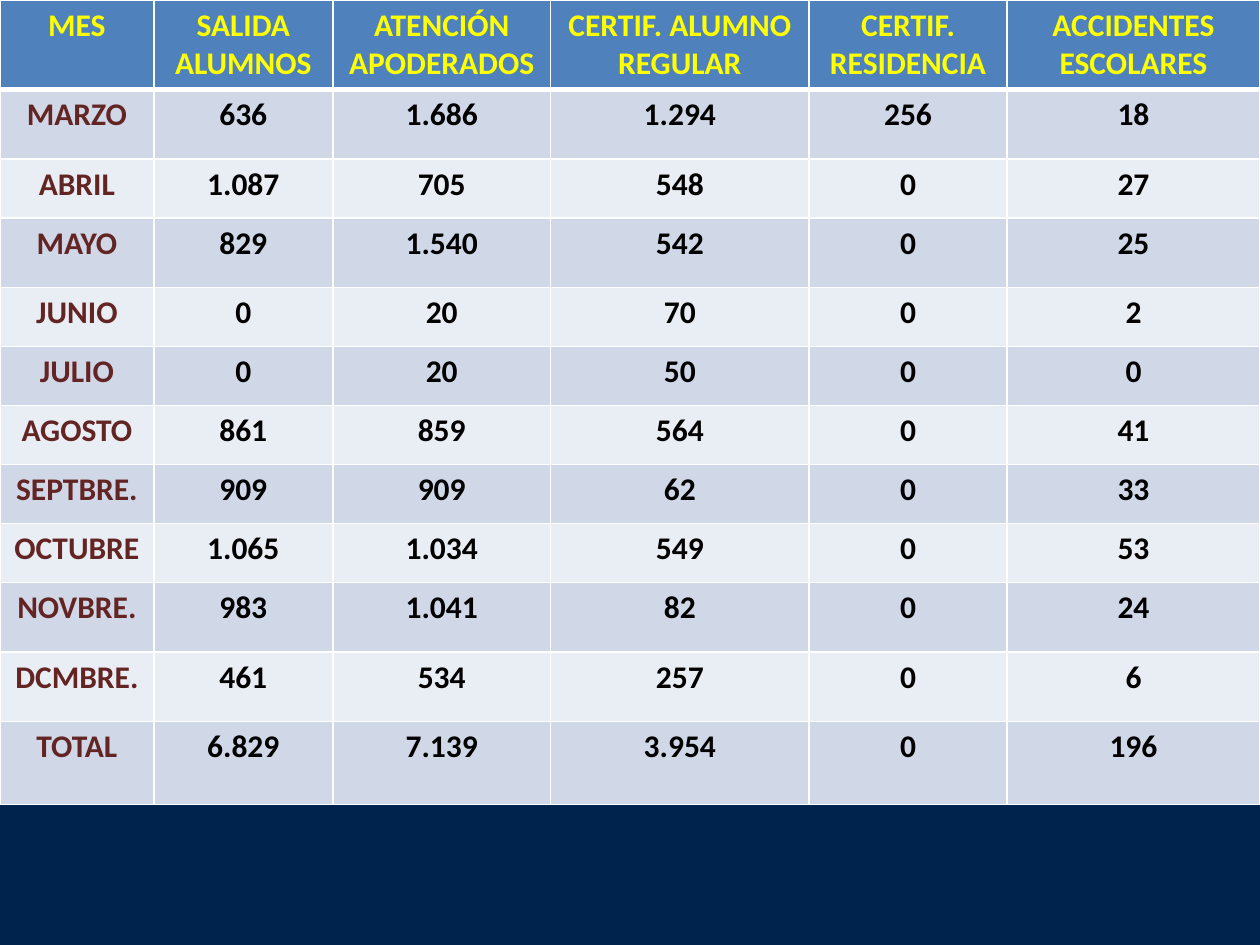
from dataclasses import dataclass

from lxml import etree
from pptx import Presentation
from pptx.dml.color import RGBColor
from pptx.enum.text import PP_ALIGN
from pptx.oxml import parse_xml
from pptx.oxml.ns import nsdecls, qn
from pptx.slide import Slide
from pptx.table import Table, _Cell
from pptx.util import Cm, Pt

CENTER = PP_ALIGN.CENTER
FONT = "Calibri"
WHITE = "FFFFFF"
HEADER_FILL = "4F81BD"
HEADER_TEXT = "FFFF00"
MONTH_TEXT = "632523"
COUNT_TEXT = "000000"
BAND_FILLS = ("D0D8E8", "E9EDF4")
BACKDROP_STOPS = ((0, "BFC9E5"), (40, "B5C0E0"), (100, "00234D"))
COLUMN_WIDTHS = (3.1, 3.61, 4.39, 5.21, 3.99, 5.1)
HEADER_HEIGHT = 1.68
SHORT, TALL, TOTAL_HEIGHT = 1.19, 1.4, 1.68


@dataclass(frozen=True)
class MonthRecord:
    month: str
    counts: tuple[str, ...]
    height: float = SHORT


HEADINGS = (
    "MES",
    "SALIDA ALUMNOS",
    "ATENCIÓN APODERADOS",
    "CERTIF. ALUMNO REGULAR",
    "CERTIF.\nRESIDENCIA",
    "ACCIDENTES ESCOLARES",
)
RECORDS = (
    MonthRecord("MARZO", ("636", "1.686", "1.294", "256", "18"), TALL),
    MonthRecord("ABRIL", ("1.087", "705", "548", "0", "27")),
    MonthRecord("MAYO", ("829", "1.540", "542", "0", "25"), TALL),
    MonthRecord("JUNIO", ("0", "20", "70", "0", "2")),
    MonthRecord("JULIO", ("0", "20", "50", "0", "0")),
    MonthRecord("AGOSTO", ("861", "859", "564", "0", "41")),
    MonthRecord("SEPTBRE.", ("909", "909", "62", "0", "33")),
    MonthRecord("OCTUBRE", ("1.065", "1.034", "549", "0", "53")),
    MonthRecord("NOVBRE.", ("983", "1.041", "82", "0", "24"), TALL),
    MonthRecord("DCMBRE.", ("461", "534", "257", "0", "6"), TALL),
    MonthRecord("TOTAL", ("6.829", "7.139", "3.954", "0", "196"), TOTAL_HEIGHT),
)


def rgb(color: str) -> RGBColor:
    return RGBColor.from_string(color)


def write_text(cell: _Cell, text: str, *, color: str, size: float = 18, bold: bool = True) -> None:
    cell.text_frame.text = text
    for paragraph in cell.text_frame.paragraphs:
        paragraph.alignment = CENTER
        for run in paragraph.runs:
            run.font.name = FONT
            run.font.size = Pt(size)
            run.font.bold = bold
            run.font.color.rgb = rgb(color)


def draw_borders(cell: _Cell, top: float, bottom: float) -> None:
    properties = cell._tc.get_or_add_tcPr()
    for side, width in (("L", 1), ("R", 1), ("T", top), ("B", bottom)):
        border = etree.SubElement(properties, qn(f"a:ln{side}"), w=str(Pt(width)))
        paint = etree.SubElement(border, qn("a:solidFill"))
        etree.SubElement(paint, qn("a:srgbClr"), val=WHITE)


def fill_cell(cell: _Cell, text: str, *, color: str, fill: str, top: float = 1, bottom: float = 1) -> None:
    draw_borders(cell, top, bottom)
    cell.fill.solid()
    cell.fill.fore_color.rgb = rgb(fill)
    write_text(cell, text, color=color)


def paint_backdrop(slide: Slide) -> None:
    stops = "".join(
        f'<a:gs pos="{position * 1000}"><a:srgbClr val="{color}"/></a:gs>'
        for position, color in BACKDROP_STOPS
    )
    backdrop = parse_xml(
        f'<p:bg {nsdecls("p", "a")}><p:bgPr><a:gradFill rotWithShape="1">'
        f'<a:gsLst>{stops}</a:gsLst><a:path path="circle">'
        '<a:fillToRect l="50000" t="-80000" r="50000" b="180000"/></a:path>'
        "</a:gradFill><a:effectLst/></p:bgPr></p:bg>"
    )
    slide._element.cSld.insert(0, backdrop)


def fill_header(table: Table) -> None:
    table.rows[0].height = Cm(HEADER_HEIGHT)
    for column, heading in enumerate(HEADINGS):
        fill_cell(table.cell(0, column), heading, color=HEADER_TEXT, fill=HEADER_FILL, bottom=3)


def fill_record(table: Table, row: int, record: MonthRecord) -> None:
    table.rows[row].height = Cm(record.height)
    for column, text in enumerate((record.month, *record.counts)):
        fill_cell(
            table.cell(row, column),
            text,
            color=COUNT_TEXT if column else MONTH_TEXT,
            fill=BAND_FILLS[(row - 1) % 2],
            top=3 if row == 1 else 1,
        )


def main() -> None:
    presentation = Presentation()
    presentation.slide_width, presentation.slide_height = Cm(25.4), Cm(19.05)
    slide = presentation.slides.add_slide(presentation.slide_layouts[6])
    paint_backdrop(slide)

    table_height = HEADER_HEIGHT + sum(record.height for record in RECORDS)
    monthly_table = slide.shapes.add_table(
        len(RECORDS) + 1, len(HEADINGS), Cm(0), Cm(0), Cm(sum(COLUMN_WIDTHS)), Cm(table_height)
    ).table
    for column, width in zip(monthly_table.columns, COLUMN_WIDTHS):
        column.width = Cm(width)
    fill_header(monthly_table)
    for row, record in enumerate(RECORDS, start=1):
        fill_record(monthly_table, row, record)

    presentation.save("out.pptx")


if __name__ == "__main__":
    main()
